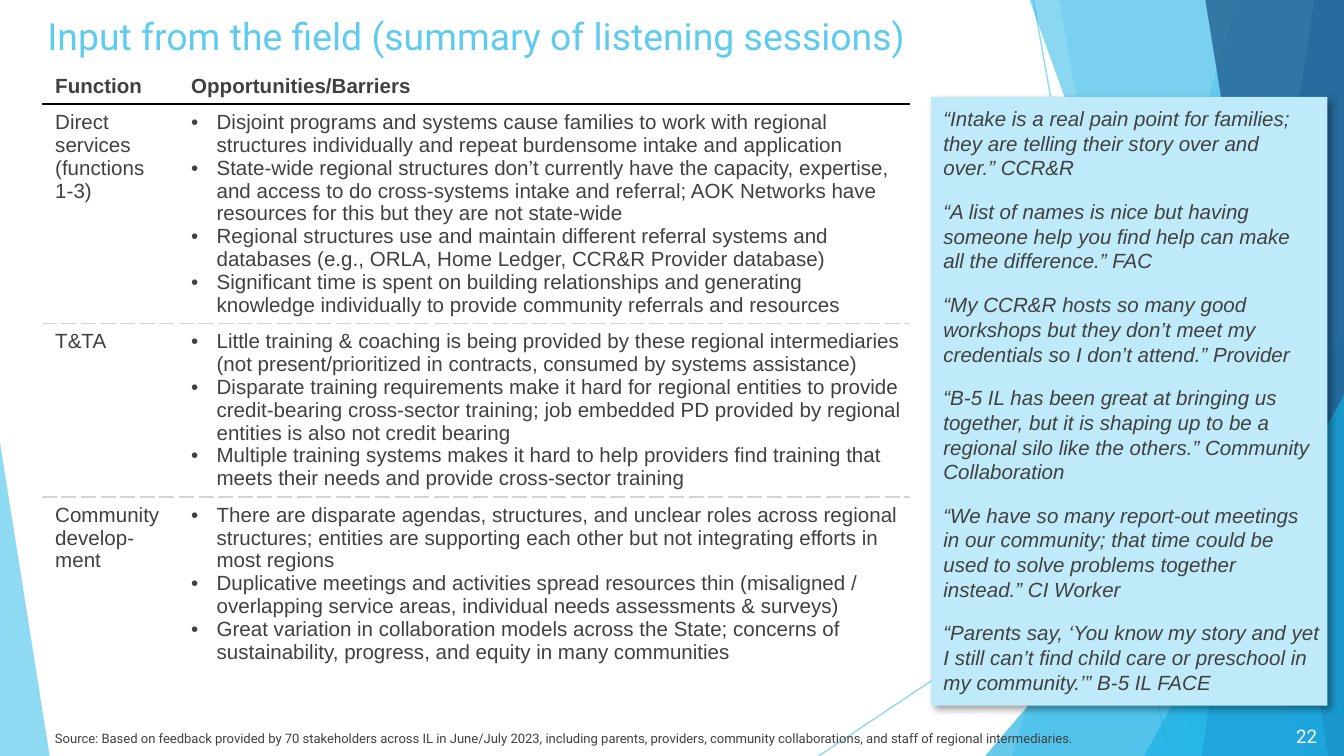
from dataclasses import dataclass
from typing import NamedTuple

from lxml.etree import SubElement
from pptx import Presentation
from pptx.dml.color import RGBColor
from pptx.enum.shapes import MSO_CONNECTOR, MSO_SHAPE
from pptx.enum.text import MSO_ANCHOR, PP_ALIGN
from pptx.oxml import parse_xml
from pptx.oxml.ns import nsdecls, qn
from pptx.util import Cm, Pt


@dataclass(frozen=True)
class Theme:
    sky: str = "5FCBEF"
    cyan: str = "17B0E4"
    blue: str = "2E83C3"
    navy: str = "226292"
    panel: str = "BFEAF9"
    text: str = "404040"
    white: str = "FFFFFF"
    rule: str = "000000"
    dash: str = "D3D3D3"
    heading_font: str = "Roboto"
    body_font: str = "Arial"
    title_size: float = 20
    body_size: float = 11
    number_size: float = 10
    source_size: float = 7


class Box(NamedTuple):
    left: float
    top: float
    width: float
    height: float


class Wedge(NamedTuple):
    """Band from a slanted edge to the right side of the slide."""
    top_x: float
    bottom_x: float
    color: str
    opacity: int


class Corner(NamedTuple):
    """Right-angled triangle; apex is 0 for left and 1 for right."""
    box: Box
    apex: int
    color: str
    opacity: int


class Section(NamedTuple):
    function: list[str]
    points: list[str]


class Quote(NamedTuple):
    text: str
    lines: int
    width: float = 7.45


THEME = Theme()
WIDTH, HEIGHT = 25.4, 14.29
PLAIN_TABLE_STYLE = "{2D5ABB26-0587-4C30-8999-92F81FD0307C}"

RAYS = [(19.53, 0, 22.07, HEIGHT), (WIDTH, 7.67, 15.47, HEIGHT)]
DECORATION = [
    Wedge(23.39, 19.13, THEME.sky, 36),
    Wedge(20.02, 22.53, THEME.sky, 20),
    Corner(Box(18.62, 6.35, 6.78, 7.94), 1, THEME.cyan, 66),
    Wedge(19.46, 24.59, THEME.cyan, 50),
    Wedge(24.84, 22.71, THEME.blue, 70),
    Wedge(22.78, 25.1, THEME.navy, 80),
    Corner(Box(21.62, 7.47, 3.78, 6.82), 1, THEME.cyan, 66),
    Corner(Box(0, 8.36, 0.94, 5.93), 0, THEME.sky, 70),
]
HEADERS = ["Function", "Opportunities/Barriers"]
SECTIONS = [
    Section(["Direct services (functions", "1-3)"], [
        "Disjoint programs and systems cause families to work with regional structures individually and repeat burdensome intake and application",
        "State-wide regional structures don’t currently have the capacity, expertise, and access to do cross-systems intake and referral; AOK Networks have resources for this but they are not state-wide",
        "Regional structures use and maintain different referral systems and databases (e.g., ORLA, Home Ledger, CCR&R Provider database)",
        "Significant time is spent on building relationships and generating knowledge individually to provide community referrals and resources",
    ]),
    Section(["T&TA"], [
        "Little training & coaching is being provided by these regional intermediaries (not present/prioritized in contracts, consumed by systems assistance)",
        "Disparate training requirements make it hard for regional entities to provide credit-bearing cross-sector training; job embedded PD provided by regional entities is also not credit bearing",
        "Multiple training systems makes it hard to help providers find training that meets their needs and provide cross-sector training",
    ]),
    Section(["Community develop-ment"], [
        "There are disparate agendas, structures, and unclear roles across regional structures; entities are supporting each other but not integrating efforts in most regions",
        "Duplicative meetings and activities spread resources thin (misaligned / overlapping service areas, individual needs assessments & surveys)",
        "Great variation in collaboration models across the State; concerns of sustainability, progress, and equity in many communities",
    ]),
]
QUOTES = [
    Quote("“Intake is a real pain point for families; they are telling their story over and over.” CCR&R", 3),
    Quote("“A list of names is nice but having someone help you find help can make all the difference.” FAC", 3),
    Quote("“My CCR&R hosts so many good workshops but they don’t meet my credentials so I don’t attend.” Provider", 3),
    Quote("“B-5 IL has been great at bringing us together, but it is shaping up to be a regional silo like the others.” Community Collaboration", 4),
    Quote("“We have so many report-out meetings in our community; that time could be used to solve problems together instead.” CI Worker", 4),
    Quote("“Parents say, ‘You know my story and yet I still can’t find child care or preschool in my community.’” B-5 IL FACE", 3, 7.68),
]
SOURCE = ("Source: Based on feedback provided by 70 stakeholders across IL in June/July 2023, including parents, "
          "providers, community collaborations, and staff of regional intermediaries.")


def set_opacity(properties, opacity: int) -> None:
    color = next(properties.iter(qn("a:srgbClr")))
    SubElement(color, qn("a:alpha"), val=str(opacity * 1000))


def paint(shape, color: str, opacity: int = 100) -> None:
    shape.shadow.inherit = False
    shape.fill.solid()
    shape.fill.fore_color.rgb = RGBColor.from_string(color)
    shape.line.fill.background()
    if opacity < 100:
        set_opacity(shape.element.spPr, opacity)


def write(frame, texts: list[str], size: float, color: str = THEME.text,
          font: str = THEME.body_font, align: PP_ALIGN = PP_ALIGN.LEFT, **styles: bool) -> None:
    for index, text in enumerate(texts):
        paragraph = frame.paragraphs[0] if index == 0 else frame.add_paragraph()
        paragraph.alignment = align
        run = paragraph.add_run()
        run.text = text
        run.font.color.rgb = RGBColor.from_string(color)
        for name, value in {"name": font, "size": Pt(size), **styles}.items():
            setattr(run.font, name, value)


def add_text(slide, box: Box, text: str, size: float, anchor=MSO_ANCHOR.TOP, **styles) -> None:
    frame = slide.shapes.add_textbox(*map(Cm, box)).text_frame
    frame.word_wrap = True
    frame.vertical_anchor = anchor
    write(frame, [text], size, **styles)


def add_ray(slide, ends: tuple) -> None:
    ray = slide.shapes.add_connector(MSO_CONNECTOR.STRAIGHT, *map(Cm, ends))
    ray.line.color.rgb = RGBColor.from_string(THEME.sky)
    ray.line.width = Pt(0.75)
    set_opacity(ray.element.spPr, 70)
    SubElement(ray.element.spPr, qn("a:effectLst"))


def add_wedge(slide, wedge: Wedge) -> None:
    builder = slide.shapes.build_freeform(Cm(wedge.top_x), 0)
    corners = [(WIDTH, 0), (WIDTH, HEIGHT), (wedge.bottom_x, HEIGHT)]
    builder.add_line_segments([(Cm(x), Cm(y)) for x, y in corners], close=True)
    paint(builder.convert_to_shape(), wedge.color, wedge.opacity)


def add_corner(slide, corner: Corner) -> None:
    shape = slide.shapes.add_shape(MSO_SHAPE.ISOSCELES_TRIANGLE, *map(Cm, corner.box))
    shape.adjustments[0] = corner.apex
    paint(shape, corner.color, corner.opacity)


def add_bullets(frame) -> None:
    for paragraph in frame.paragraphs:
        properties = paragraph._p.get_or_add_pPr()
        properties.set("marL", str(Cm(0.48)))
        properties.set("indent", str(-Cm(0.48)))
        SubElement(properties, qn("a:buFont"), typeface=THEME.body_font)
        SubElement(properties, qn("a:buChar"), char="•")


def set_border(cell, side: str, color: str, dash: str) -> None:
    # Borders come before the fill, top ahead of bottom
    properties = cell._tc.get_or_add_tcPr()
    border = parse_xml(
        f'<a:{side} {nsdecls("a")} w="12700"><a:solidFill><a:srgbClr val="{color}"/></a:solidFill>'
        f'<a:prstDash val="{dash}"/></a:{side}>')
    properties.insert(len(properties.findall(qn("a:lnT"))), border)


def add_findings(slide) -> None:
    widths, heights = [2.57, 13.84], [0.7, 4.14, 3.28, 4.07]
    box = Box(0.79, 1.27, sum(widths), sum(heights))
    table = slide.shapes.add_table(len(heights), len(widths), *map(Cm, box)).table
    table.first_row = table.horz_banding = False
    table._tbl.tblPr.find(qn("a:tableStyleId")).text = PLAIN_TABLE_STYLE
    for column, width in zip(table.columns, widths):
        column.width = Cm(width)
    rules = [(THEME.rule, "solid")] + [(THEME.dash, "sysDash")] * (len(SECTIONS) - 1)
    contents = [[[header] for header in HEADERS], *SECTIONS]
    for index, (row, height, texts) in enumerate(zip(table.rows, heights, contents)):
        row.height = Cm(height)
        for cell, lines in zip(row.cells, texts):
            cell.fill.background()
            cell.vertical_anchor = MSO_ANCHOR.TOP if index else MSO_ANCHOR.BOTTOM
            cell.margin_right = Cm(0.13 if index else 0.25)
            write(cell.text_frame, lines, THEME.body_size, bold=index == 0)
            if index > 0:
                set_border(cell, "lnT", *rules[index - 1])
            if index < len(rules):
                set_border(cell, "lnB", *rules[index])
        if index:
            add_bullets(row.cells[1].text_frame)


def add_quotes(slide) -> None:
    panel = slide.shapes.add_shape(MSO_SHAPE.RECTANGLE, *map(Cm, Box(17.6, 1.83, 7.49, 11.51)))
    paint(panel, THEME.panel)
    effects = panel.element.spPr.find(qn("a:effectLst"))
    shadow = SubElement(effects, qn("a:outerShdw"), blurRad=str(Pt(4)), dist=str(Pt(3)),
                        dir="2700000", algn="tl", rotWithShape="0")
    SubElement(shadow, qn("a:srgbClr"), val=THEME.rule)
    set_opacity(shadow, 40)
    top = 1.88
    for quote in QUOTES:
        height = 0.46 * quote.lines + 0.3
        add_text(slide, Box(17.58, top, quote.width, height), quote.text, THEME.body_size, italic=True)
        top += height + 0.08


def main() -> None:
    presentation = Presentation()
    presentation.slide_width, presentation.slide_height = Cm(WIDTH), Cm(HEIGHT)
    slide = presentation.slides.add_slide(presentation.slide_layouts[5])

    # Background rays and bands
    for ends in RAYS:
        add_ray(slide, ends)
    for part in DECORATION:
        (add_wedge if isinstance(part, Wedge) else add_corner)(slide, part)

    # Title
    title = slide.shapes.title
    for name, value in zip(Box._fields, Box(0.64, 0.13, 21.64, 2.74)):
        setattr(title, name, Cm(value))
    title.text_frame.vertical_anchor = MSO_ANCHOR.TOP
    write(title.text_frame, ["Input from the field (summary of listening sessions)"],
          THEME.title_size, color=THEME.sky, font=THEME.heading_font)

    # Findings and quotes
    add_findings(slide)
    add_quotes(slide)

    # Footer
    add_text(slide, Box(0.79, 13.69, 20.5, 0.56), SOURCE, THEME.source_size, font=THEME.heading_font)
    add_text(slide, Box(23.57, 13.64, 1.57, 0.56), "22", THEME.number_size, MSO_ANCHOR.MIDDLE,
             color=THEME.white, font=THEME.heading_font, align=PP_ALIGN.RIGHT)
    presentation.save("out.pptx")


if __name__ == "__main__":
    main()
